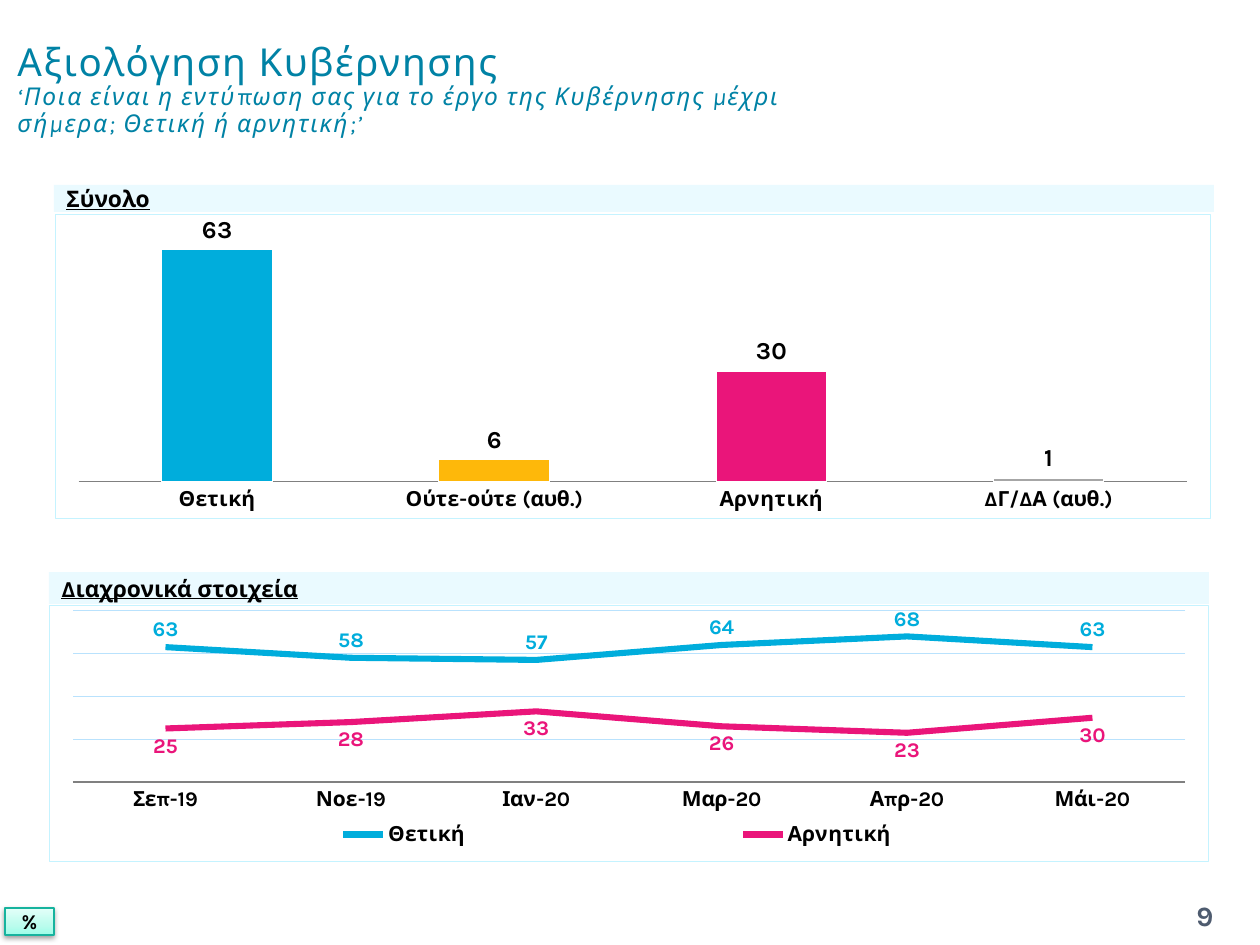
from lxml import etree
from pptx import Presentation
from pptx import util as u
from pptx.chart.data import CategoryChartData
from pptx.dml.color import RGBColor
from pptx.enum import chart as ch, shapes, text
from pptx.oxml import parse_xml
from pptx.oxml.ns import qn

SCALE = 914400 // 126
FACE = "Karla"
BLUE, PINK, GOLD, GREY = "00ADDC", "EA157A", "FEB80A", "A6A6A6"
BLACK, WHITE, TEAL, SLATE = "000000", "FFFFFF", "0082A5", "4E5B6F"
PALE, GRID, AXIS = "C5F3FF", "B9E2FD", "808080"
NS = ('xmlns:a="http://schemas.openxmlformats.org/drawingml/2006/main" '
      'xmlns:c="http://schemas.openxmlformats.org/drawingml/2006/chart"')


def px(*nums):
    return [u.Emu(n * SCALE) for n in nums]


def rgb(code):
    return RGBColor.from_string(code)


def put(obj, **vals):
    for key, val in vals.items():
        setattr(obj, key, val)


def style(font, size, color=BLACK, **vals):
    put(font, name=FACE, size=u.Pt(size), **vals)
    font.color.rgb = rgb(color)


def write(par, words, size, color=BLACK, **vals):
    run = par.add_run()
    run.text = words
    style(run.font, size, color, **vals)
    return run


def frame(shape, align=text.PP_ALIGN.LEFT):
    put(shape.text_frame, word_wrap=True,
        vertical_anchor=text.MSO_ANCHOR.MIDDLE)
    par = shape.text_frame.paragraphs[0]
    par.alignment = align
    return par


def label(slide, box, align=text.PP_ALIGN.LEFT):
    return frame(slide.shapes.add_textbox(*px(*box)), align)


def rect(slide, box):
    shape = slide.shapes.add_shape(shapes.MSO_SHAPE.RECTANGLE, *px(*box))
    shape.shadow.inherit = False
    return shape


def title(slide, box, head, ask):
    par = label(slide, box)
    par.line_spacing = 0.9
    first = write(par, head, 22, TEAL)
    par.add_line_break()
    second = write(par, ask, 14, TEAL, italic=True)
    for run in (first, second):
        run._r.get_or_add_rPr().set("spc", "100")


def band(slide, box, words, stop=None):
    shape = rect(slide, box)
    shape.fill.solid()
    shape.fill.fore_color.rgb = rgb(PALE)
    tint = shape.fill._xPr.find(".//" + qn("a:srgbClr"))
    etree.SubElement(tint, qn("a:alpha")).set("val", "35000")
    shape.line.fill.background()
    par = frame(shape)
    if stop:
        tabs = etree.SubElement(par._p.get_or_add_pPr(), qn("a:tabLst"))
        tab = etree.SubElement(tabs, qn("a:tab"))
        tab.set("pos", str(stop * SCALE))
        tab.set("algn", "l")
        words += "\t"
    write(par, words, 13, bold=True, underline=True)


def badge(slide, box, words):
    shape = rect(slide, box)
    shape.line.color.rgb = rgb("16B39E")
    shape.line.width = u.Pt(0.75)
    stops = "".join(
        f'<a:gs pos="{pos}000"><a:srgbClr val="{code}"/></a:gs>'
        for pos, code in ((0, "9DFDE8"), (35, "BBFCED"), (100, "E4FFF9")))
    props = shape._element.spPr
    props.find(qn("a:prstGeom")).addnext(parse_xml(
        f'<a:gradFill {NS}><a:gsLst>{stops}</a:gsLst>'
        '<a:lin ang="16200000" scaled="0"/></a:gradFill>'))
    props.find(qn("a:effectLst")).append(parse_xml(
        f'<a:outerShdw {NS} blurRad="{u.Pt(3.1)}" dist="{u.Pt(1.6)}" '
        f'dir="5400000" rotWithShape="0"><a:srgbClr val="{BLACK}">'
        '<a:alpha val="38000"/></a:srgbClr></a:outerShdw>'))
    write(frame(shape, text.PP_ALIGN.CENTER), words, 12, bold=True)


def place(part, spot, index, inner=False):
    for old in part.findall(qn("c:layout")):
        part.remove(old)
    target = '<c:layoutTarget val="inner"/>' if inner else ""
    modes = '<c:xMode val="edge"/><c:yMode val="edge"/>'
    sides = "".join(f'<c:{k} val="{v}"/>' for k, v in zip("xywh", spot))
    part.insert(index, parse_xml(
        f'<c:layout {NS}><c:manualLayout>{target}{modes}{sides}'
        '</c:manualLayout></c:layout>'))


def plot(slide, box, kind, names, rows, top, spot):
    data = CategoryChartData()
    data.categories = names
    for name, vals in rows:
        data.add_series(name, vals)
    chart = slide.shapes.add_chart(kind, *px(*box), data).chart
    put(chart, has_title=False, has_legend=False)
    style(chart.font, 18)
    root = chart._chartSpace
    if root.find(qn("c:roundedCorners")) is None:
        root.find(qn("c:date1904")).addnext(
            parse_xml(f'<c:roundedCorners {NS} val="0"/>'))
    root.find(qn("c:chart")).addnext(parse_xml(
        f'<c:spPr {NS}><a:noFill/><a:ln w="9525"><a:solidFill>'
        f'<a:srgbClr val="{PALE}"/></a:solidFill></a:ln></c:spPr>'))
    place(root.find(".//" + qn("c:plotArea")), spot, 0, True)
    put(chart.value_axis, minimum_scale=0, maximum_scale=top,
        major_unit=20, visible=False, has_major_gridlines=False)
    axis = chart.category_axis
    axis.major_tick_mark = ch.XL_TICK_MARK.NONE
    axis.format.line.color.rgb = rgb(AXIS)
    style(axis.tick_labels.font, 12, bold=True)
    chart.plots[0].vary_by_categories = False
    return chart


def tag(row, size, color, spot):
    marks = row.data_labels
    put(marks, show_value=True, position=spot, number_format="0",
        number_format_is_linked=False)
    style(marks.font, size, color, bold=True)


def bars(slide, box):
    names = ["Θετική", "Ούτε-ούτε (αυθ.)", "Αρνητική", "ΔΓ/ΔΑ (αυθ.)"]
    chart = plot(slide, box, ch.XL_CHART_TYPE.COLUMN_CLUSTERED, names,
                 [("Series 1", [63, 6, 30, 1])], 70,
                 (0.02, 0.03, 0.96, 0.85))
    put(chart.plots[0], gap_width=150, overlap=-25)
    row = chart.plots[0].series[0]
    for i, color in enumerate((BLUE, GOLD, PINK, GREY)):
        form = row.points[i].format
        form.fill.solid()
        form.fill.fore_color.rgb = rgb(color)
        form.line.color.rgb = rgb(WHITE)
    tag(row, 14, BLACK, ch.XL_LABEL_POSITION.OUTSIDE_END)


def trend(slide, box):
    names = ["Σεπ-19", "Νοε-19", "Ιαν-20", "Μαρ-20", "Απρ-20", "Μάι-20"]
    rows = [("Θετική", [63, 58, 57, 64, 68, 63]),
            ("Αρνητική", [25, 28, 33, 26, 23, 30])]
    chart = plot(slide, box, ch.XL_CHART_TYPE.LINE, names, rows, 80,
                 (0.02, 0.02, 0.96, 0.67))
    grid = chart.value_axis.major_gridlines.format.line
    grid.color.rgb = rgb(GRID)
    grid.width = u.Pt(0.75)
    spots = ch.XL_LABEL_POSITION.ABOVE, ch.XL_LABEL_POSITION.BELOW
    for row, color, spot in zip(chart.plots[0].series, (BLUE, PINK), spots):
        row.smooth = False
        row.marker.style = ch.XL_MARKER_STYLE.NONE
        row.format.line.color.rgb = rgb(color)
        row.format.line.width = u.Pt(3.5)
        tag(row, 12, color, spot)
    chart.has_legend = True
    key = chart.legend
    put(key, position=ch.XL_LEGEND_POSITION.BOTTOM, include_in_layout=False)
    style(key.font, 12, bold=True)
    place(key._element, (0.02, 0.83, 0.94, 0.13), 1)


def main():
    deck = Presentation()
    put(deck, slide_width=u.Inches(10), slide_height=u.Inches(7.5))
    slide = deck.slides.add_slide(deck.slide_layouts[6])
    title(slide, (5, 16, 863, 149), "Αξιολόγηση Κυβέρνησης",
          "‘Ποια είναι η εντύπωση σας για το έργο της Κυβέρνησης μέχρι "
          "σήμερα; Θετική ή αρνητική;’")
    band(slide, (54, 185, 1160, 27), "Σύνολο", 143)
    bars(slide, (55, 214, 1156, 305))
    band(slide, (49, 572, 1160, 32), "Διαχρονικά στοιχεία")
    trend(slide, (49, 605, 1160, 257))
    badge(slide, (5, 908, 49, 27), "%")
    page = label(slide, (1155, 890, 100, 50), text.PP_ALIGN.CENTER)
    write(page, "9", 16, SLATE, bold=True)
    deck.save("out.pptx")


if __name__ == "__main__":
    main()
